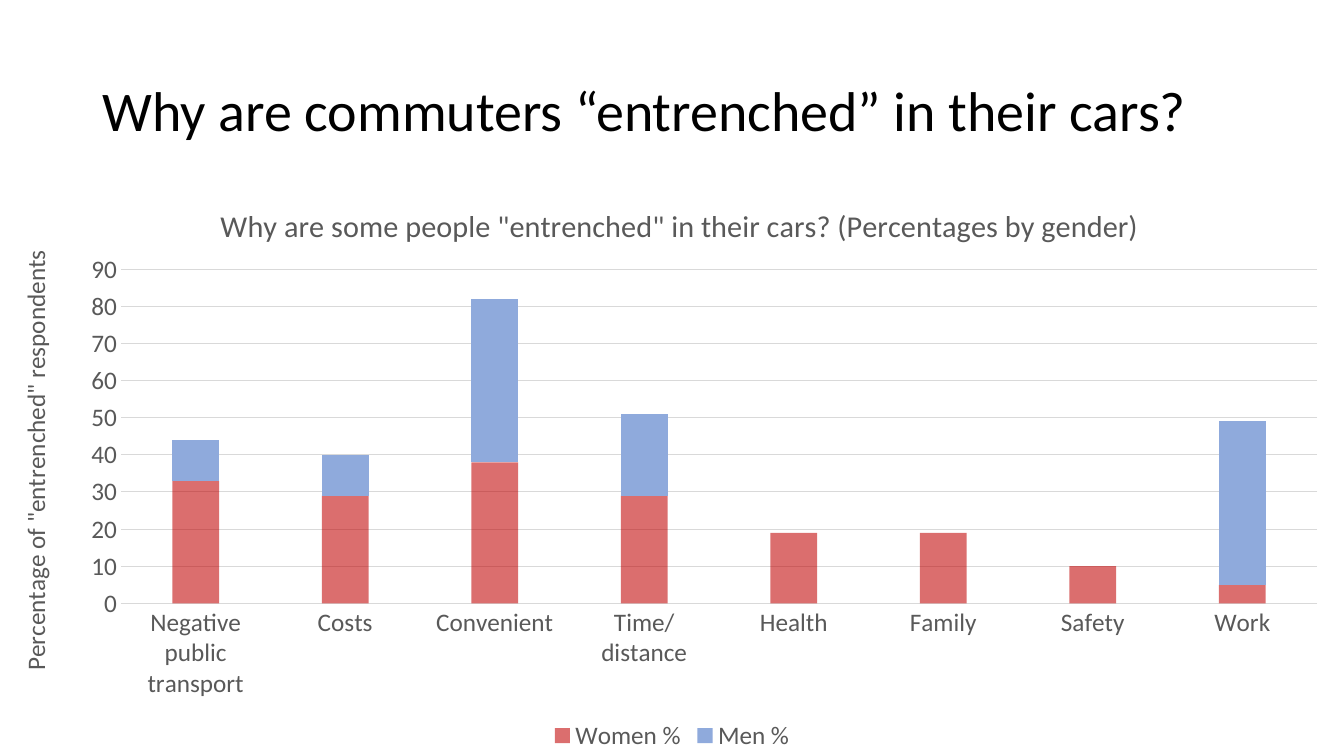
from lxml import etree
from pptx import Presentation
from pptx.chart.data import CategoryChartData
from pptx.dml.color import RGBColor
from pptx.enum.chart import XL_CHART_TYPE, XL_LEGEND_POSITION, XL_TICK_MARK
from pptx.enum.text import MSO_ANCHOR, MSO_AUTO_SIZE, PP_ALIGN
from pptx.oxml.ns import qn
from pptx.util import Cm, Pt

STACKED = XL_CHART_TYPE.COLUMN_STACKED
BOTTOM = XL_LEGEND_POSITION.BOTTOM
NO_TICKS = XL_TICK_MARK.NONE

HEADLINE = "Why are commuters “entrenched” in their cars?"
CHART_TITLE = 'Why are some people "entrenched" in their cars? (Percentages by gender)'
AXIS_TITLE = 'Percentage of "entrenched" respondents'
REASONS = ["Negative public transport", "Costs", "Convenient", "Time/distance",
           "Health", "Family", "Safety", "Work"]
RESPONSES = {
    "Women %": (33, 29, 38, 29, 19, 19, 10, 5),
    "Men %": (11, 11, 44, 22, 0, 0, 0, 44),
}
COLORS = {"headline": "000000", "label": "595959", "grid": "D9D9D9",
          "Women %": "C00000", "Men %": "8FAADC"}
OPACITY = {"Women %": 57}
FONT = "Calibri"

WIDTH, HEIGHT = Cm(33.87), Cm(19.05)
HEADLINE_BOX = {"left": Cm(2.33), "top": Cm(1.01), "width": Cm(29.21), "height": Cm(3.68)}
CHART_TOP = Cm(4.27)
PLOT_LAYOUT = {"layoutTarget": "inner", "xMode": "edge", "yMode": "edge",
               "x": 0.09, "y": 0.17, "w": 0.89, "h": 0.57}
CHART_TITLE_LAYOUT = {"xMode": "edge", "yMode": "edge", "x": 0.16, "y": 0.05}
AXIS_TITLE_LAYOUT = {"xMode": "edge", "yMode": "edge", "x": 0.01, "y": 0.13}


def set_all(target, values):
    for name, value in values.items():
        setattr(target, name, value)


def style_font(font, size, color):
    set_all(font, {"name": FONT, "size": Pt(size), "bold": False})
    font.color.rgb = RGBColor.from_string(COLORS[color])


def style_line(line):
    line.color.rgb = RGBColor.from_string(COLORS["grid"])
    line.width = Pt(0.75)


def place(parent, index, values):
    for old in parent.findall(qn("c:layout")):
        parent.remove(old)
    layout = etree.Element(qn("c:layout"))
    manual = etree.SubElement(layout, qn("c:manualLayout"))
    for tag, value in values.items():
        etree.SubElement(manual, qn("c:" + tag)).set("val", str(value))
    parent.insert(index, layout)


def write_title(owner, text, size, layout):
    title = owner.axis_title if hasattr(owner, "axis_title") else owner.chart_title
    title.text_frame.text = text
    style_font(title.text_frame.paragraphs[0].runs[0].font, size, "label")
    place(title._element, 1, layout)


def add_headline(slide):
    headline = slide.shapes.title
    set_all(headline, HEADLINE_BOX)
    frame = headline.text_frame
    frame.text = HEADLINE
    set_all(frame, {"vertical_anchor": MSO_ANCHOR.MIDDLE, "word_wrap": True,
                    "auto_size": MSO_AUTO_SIZE.NONE})
    set_all(frame.paragraphs[0], {"alignment": PP_ALIGN.LEFT, "line_spacing": 0.9})
    style_font(frame.paragraphs[0].runs[0].font, 40, "headline")


def add_reasons_chart(slide):
    data = CategoryChartData()
    data.categories = REASONS
    for gender, percentages in RESPONSES.items():
        data.add_series(gender, percentages)
    chart = slide.shapes.add_chart(STACKED, 0, CHART_TOP, WIDTH,
                                   HEIGHT - CHART_TOP, data).chart
    style_font(chart.font, 18, "label")
    write_title(chart, CHART_TITLE, 21.6, CHART_TITLE_LAYOUT)

    chart.has_legend = True
    set_all(chart.legend, {"position": BOTTOM, "include_in_layout": False})
    style_font(chart.legend.font, 18, "label")

    reasons, percent = chart.category_axis, chart.value_axis
    for axis in (reasons, percent):
        set_all(axis, {"major_tick_mark": NO_TICKS, "minor_tick_mark": NO_TICKS})
        style_font(axis.tick_labels.font, 18, "label")
    style_line(reasons.format.line)
    percent.format.line.fill.background()
    set_all(percent, {"minimum_scale": 0, "maximum_scale": 90, "major_unit": 10,
                      "has_major_gridlines": True})
    style_line(percent.major_gridlines.format.line)
    write_title(percent, AXIS_TITLE, 18, AXIS_TITLE_LAYOUT)

    plot = chart.plots[0]
    set_all(plot, {"gap_width": 219, "overlap": 100, "vary_by_categories": False})
    for series in plot.series:
        series.invert_if_negative = False
        fill = series.format.fill
        fill.solid()
        fill.fore_color.rgb = RGBColor.from_string(COLORS[series.name])
        if series.name in OPACITY:
            color = next(series._element.iter(qn("a:srgbClr")))
            etree.SubElement(color, qn("a:alpha")).set("val", str(OPACITY[series.name] * 1000))
    place(next(chart._chartSpace.iter(qn("c:plotArea"))), 0, PLOT_LAYOUT)


def main():
    deck = Presentation()
    set_all(deck, {"slide_width": WIDTH, "slide_height": HEIGHT})
    slide = deck.slides.add_slide(deck.slide_layouts[5])
    add_headline(slide)
    add_reasons_chart(slide)
    deck.save("out.pptx")


if __name__ == "__main__":
    main()
